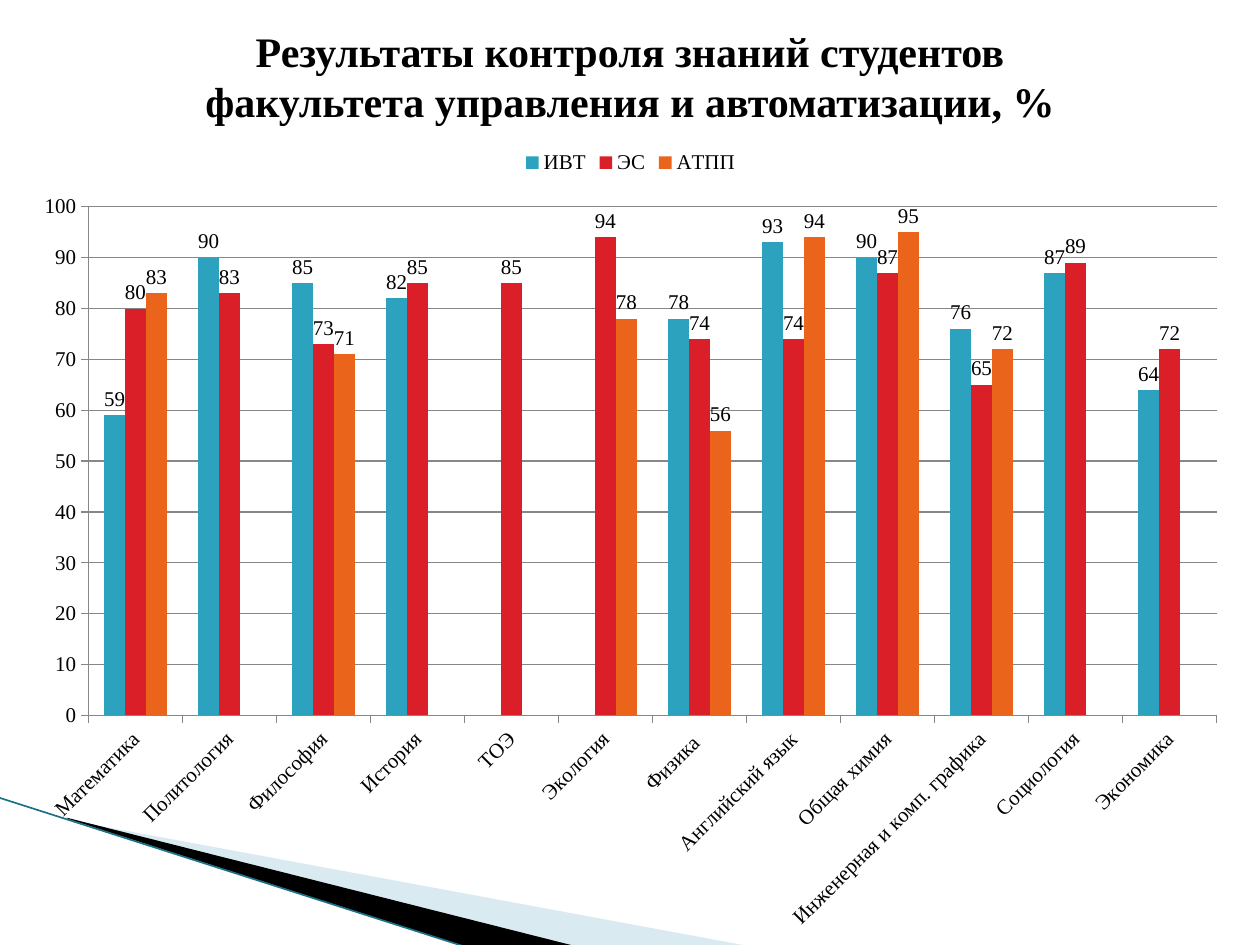
"""Build a slide charting student test results by subject."""
from dataclasses import dataclass
from typing import Optional

from lxml.etree import fromstring
from pptx import Presentation
from pptx.chart.data import CategoryChartData
from pptx.dml.color import RGBColor
from pptx.enum.chart import XL_CHART_TYPE, XL_LABEL_POSITION, XL_LEGEND_POSITION, XL_TICK_MARK
from pptx.enum.text import MSO_ANCHOR, PP_ALIGN
from pptx.oxml import parse_xml
from pptx.oxml.ns import nsdecls, qn
from pptx.util import Inches, Pt


@dataclass(frozen=True)
class Theme:
    font: str = "Times New Roman"
    title_size: float = 24
    chart_size: float = 12
    text: str = "000000"
    grid: str = "878787"
    pale: str = "A0CBDC"
    edge: str = "1B7288"


@dataclass(frozen=True)
class Wedge:
    points: tuple[tuple[float, float], ...]
    color: str
    opacity: int


@dataclass(frozen=True)
class Group:
    name: str
    color: str
    scores: tuple[Optional[int], ...]


THEME = Theme()
TITLE = ("Результаты контроля знаний студентов", "факультета управления и автоматизации, %")
WEDGES = (
    Wedge(((0.55, 6.51), (5.95, 7.51), (4.56, 7.51), (0.55, 6.5)), THEME.pale, 40),
    Wedge(((0.53, 6.49), (4.57, 7.51), (3.72, 7.52), (0.54, 6.5)), THEME.text, 100),
)
SUBJECTS = (
    "Математика", "Политология", "Философия", "История", "ТОЭ", "Экология", "Физика ",
    "Английский язык", "Общая химия", "Инженерная и комп. графика", "Социология", "Экономика",
)
GROUPS = (
    Group("ИВТ", "2DA2BF", (59, 90, 85, 82, None, None, 78, 93, 90, 76, 87, 64)),
    Group("ЭС", "DA1F28", (80, 83, 73, 85, 85, 94, 74, 74, 87, 65, 89, 72)),
    Group("АТПП", "EB641B", (83, None, 71, None, None, 78, 56, 94, 95, 72, None, None)),
)
PLOT_LAYOUT = {"x": 0.056, "y": 0.086, "w": 0.924, "h": 0.63}


def apply(target, values: dict) -> None:
    """Set every named attribute on the target."""
    for name, value in values.items():
        setattr(target, name, value)


def style_font(font, size: float, bold: bool = False) -> None:
    """Give a font the theme's face and colour."""
    apply(font, {"name": THEME.font, "size": Pt(size), "bold": bold})
    font.color.rgb = RGBColor.from_string(THEME.text)


def style_line(line, color: str, width: float) -> None:
    """Set the colour and width of a line."""
    line.color.rgb = RGBColor.from_string(color)
    line.width = Pt(width)


def draw_wedge(page, wedge: Wedge) -> None:
    """Draw one corner wedge."""
    points = [(Inches(x), Inches(y)) for x, y in wedge.points]
    builder = page.shapes.build_freeform(*points[0], scale=1.0)
    builder.add_line_segments(points[1:], close=True)
    shape = builder.convert_to_shape()
    shape.shadow.inherit = False
    shape.fill.solid()
    shape.fill.fore_color.rgb = RGBColor.from_string(wedge.color)
    shape.line.fill.background()
    if wedge.opacity < 100:
        color = shape.fill._xPr.find(qn("a:solidFill"))[0]
        color.append(parse_xml(f'<a:alpha {nsdecls("a")} val="{wedge.opacity * 1000}"/>'))


def draw_edge(page) -> None:
    """Draw the thin line along the corner wedges."""
    edge = page.shapes.add_connector(1, Inches(-0.01), Inches(6.33), Inches(3.71), Inches(7.52))
    style_line(edge.line, THEME.edge, 0.95)
    edge._element.spPr.append(parse_xml(f'<a:effectLst {nsdecls("a")}/>'))


def draw_title(page) -> None:
    """Write the two-line heading."""
    box = page.shapes.add_textbox(Inches(0.5), Inches(0.3), Inches(9), Inches(0.95))
    frame = box.text_frame
    apply(frame, {"word_wrap": True, "vertical_anchor": MSO_ANCHOR.MIDDLE,
                  "margin_top": Inches(0), "margin_bottom": Inches(0.35)})
    para = frame.paragraphs[0]
    para.alignment = PP_ALIGN.CENTER
    for index, text in enumerate(TITLE):
        if index:
            para.add_line_break()
        span = para.add_run()
        span.text = text
        style_font(span.font, THEME.title_size, bold=True)


def style_axes(chart) -> None:
    """Format both axes and the gridlines."""
    for axis in (chart.category_axis, chart.value_axis):
        apply(axis, {"major_tick_mark": XL_TICK_MARK.OUTSIDE, "minor_tick_mark": XL_TICK_MARK.NONE})
        style_line(axis.format.line, THEME.grid, 0.75)
    apply(chart.value_axis, {"minimum_scale": 0, "maximum_scale": 100, "major_unit": 10,
                             "has_major_gridlines": True})
    style_line(chart.value_axis.major_gridlines.format.line, THEME.grid, 0.75)
    labels = chart.category_axis.tick_labels
    style_font(labels.font, THEME.chart_size)
    chart.category_axis._element.find(qn("c:txPr")).find(qn("a:bodyPr")).set("rot", "-2700000")


def place_plot(chart) -> None:
    """Fix the inner plot area within the chart frame."""
    modes = "".join(f'<c:{side}Mode val="edge"/>' for side in "xy")
    sizes = "".join(f'<c:{side} val="{value}"/>' for side, value in PLOT_LAYOUT.items())
    layout = fromstring(f'<c:layout {nsdecls("c")}><c:manualLayout><c:layoutTarget val="inner"/>'
                        f'{modes}{sizes}</c:manualLayout></c:layout>')
    area = chart._chartSpace.chart.plotArea
    for old in area.findall(qn("c:layout")):
        area.remove(old)
    area.insert(0, layout)


def draw_chart(page) -> None:
    """Chart the scores of each group by subject."""
    data = CategoryChartData(number_format="General")
    data.categories = SUBJECTS
    for group in GROUPS:
        data.add_series(group.name, group.scores)
    frame = page.shapes.add_chart(XL_CHART_TYPE.COLUMN_CLUSTERED, Inches(0.16), Inches(1.09),
                                  Inches(9.69), Inches(6.41), data)
    chart = frame.chart
    style_font(chart.font, THEME.chart_size)
    apply(chart, {"has_title": False, "has_legend": True})
    apply(chart.legend, {"position": XL_LEGEND_POSITION.TOP, "include_in_layout": False})
    plot = chart.plots[0]
    apply(plot, {"gap_width": 150, "overlap": 0, "vary_by_categories": False})
    for series, group in zip(plot.series, GROUPS):
        series.invert_if_negative = False
        series.format.fill.solid()
        series.format.fill.fore_color.rgb = RGBColor.from_string(group.color)
        apply(series.data_labels, {"show_value": True, "position": XL_LABEL_POSITION.OUTSIDE_END})
        style_font(series.data_labels.font, THEME.chart_size)
    style_axes(chart)
    place_plot(chart)


def main() -> None:
    """Assemble and save the deck."""
    deck = Presentation()
    apply(deck, {"slide_width": Inches(10), "slide_height": Inches(7.5)})
    page = deck.slides.add_slide(deck.slide_layouts[6])
    for wedge in WEDGES:
        draw_wedge(page, wedge)
    draw_edge(page)
    draw_title(page)
    draw_chart(page)
    deck.save("out.pptx")


if __name__ == "__main__":
    main()
